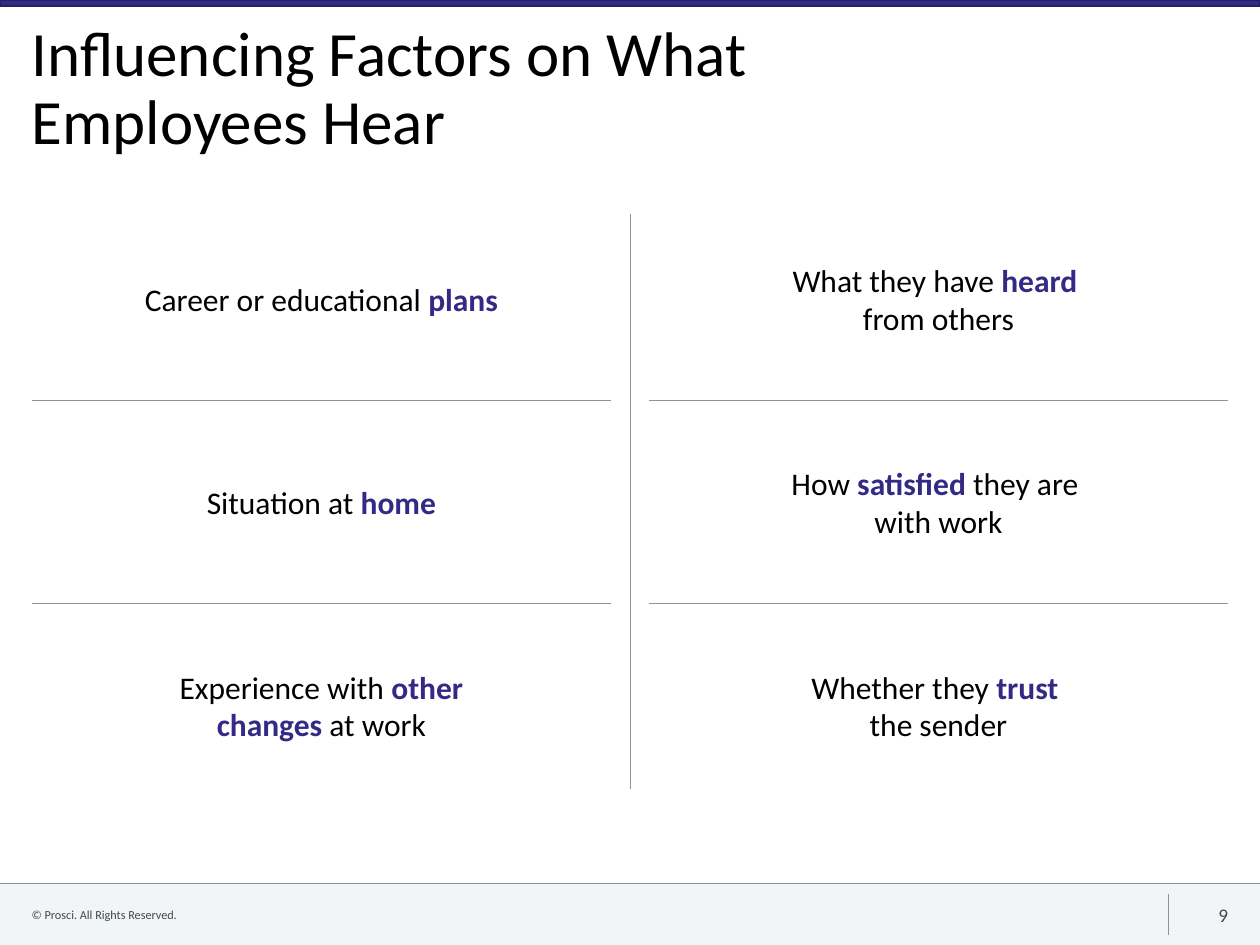
from dataclasses import dataclass

from lxml.etree import SubElement
from pptx import Presentation
from pptx.dml.color import RGBColor
from pptx.enum.shapes import MSO_CONNECTOR, MSO_SHAPE
from pptx.enum.text import MSO_ANCHOR as Anchor, PP_ALIGN as Align
from pptx.oxml.ns import qn
from pptx.util import Cm, Pt

COLORS = {
    "text": "000000",
    "accent": "342A86",
    "accent_edge": "261F63",
    "rule": "8C9696",
    "footer": "F2F5F5",
    "footer_text": "3F474F",
}
FONT = "Calibri"
WIDTH, HEIGHT = 25.4, 19.05
MARGIN = 0.64
FOOTER_TOP = 17.81
COLUMN_CENTERS = (6.48, 18.92)
FIRST_ROW_CENTER, ROW_PITCH = 6.02, 4.1
CELL_WIDTH, CELL_HEIGHT = 8.15, 1.8
RULE_WIDTH = 11.68


@dataclass(frozen=True)
class Segment:
    text: str
    color: str = "text"
    bold: bool = False


@dataclass(frozen=True)
class Box:
    left: float
    top: float
    width: float
    height: float


@dataclass(frozen=True)
class Style:
    size: float
    align: Align = Align.LEFT
    anchor: Anchor = Anchor.MIDDLE
    inset_x: float = 0
    line_spacing: float = 1.0


def key(text: str) -> Segment:
    """Highlighted words of a factor."""
    return Segment(text, "accent", True)


FACTORS = (
    (
        (Segment("Career or educational "), key("plans")),
        (Segment("What they have "), key("heard \n"), Segment("from others")),
    ),
    (
        (Segment("Situation at "), key("home")),
        (Segment("How "), key("satisfied"), Segment(" they are \nwith work")),
    ),
    (
        (Segment("Experience with "), key("other changes"), Segment(" at work")),
        (Segment("Whether they "), key("trust \n"), Segment("the sender")),
    ),
)


def rgb(name: str) -> RGBColor:
    return RGBColor.from_string(COLORS[name])


def add_band(slide, box: Box, fill: str, edge: str = "") -> None:
    shape = slide.shapes.add_shape(
        MSO_SHAPE.RECTANGLE, Cm(box.left), Cm(box.top), Cm(box.width), Cm(box.height)
    )
    shape.shadow.inherit = False
    shape.fill.solid()
    shape.fill.fore_color.rgb = rgb(fill)
    if edge:
        shape.line.color.rgb = rgb(edge)
        shape.line.width = Pt(1)
    else:
        shape.line.fill.background()


def add_rule(slide, x1: float, y1: float, x2: float, y2: float) -> None:
    connector = slide.shapes.add_connector(
        MSO_CONNECTOR.STRAIGHT, Cm(x1), Cm(y1), Cm(x2), Cm(y2)
    )
    connector.line.color.rgb = rgb("rule")
    connector.line.width = Pt(0.5)
    SubElement(connector._element.spPr, qn("a:effectLst"))


def add_text(slide, box: Box, segments: tuple[Segment, ...], style: Style) -> None:
    """Write the segments as one paragraph; a newline becomes a line break."""
    shape = slide.shapes.add_textbox(
        Cm(box.left), Cm(box.top), Cm(box.width), Cm(box.height)
    )
    frame = shape.text_frame
    frame.word_wrap = True
    frame.vertical_anchor = style.anchor
    frame.margin_left = frame.margin_right = Cm(style.inset_x)
    paragraph = frame.paragraphs[0]
    paragraph.alignment = style.align
    paragraph.line_spacing = style.line_spacing
    paragraph.font.size = Pt(style.size)
    for segment in segments:
        for index, line in enumerate(segment.text.split("\n")):
            if index:
                paragraph.add_line_break()
            if line:
                run = paragraph.add_run()
                run.text = line
                run.font.name = FONT
                run.font.size = Pt(style.size)
                run.font.bold = segment.bold
                run.font.color.rgb = rgb(segment.color)


def add_frame(slide) -> None:
    """Top band, footer and title."""
    add_band(slide, Box(0, FOOTER_TOP, WIDTH, HEIGHT - FOOTER_TOP), "footer")
    add_band(slide, Box(0, 0, WIDTH, 0.13), "accent", "accent_edge")
    add_rule(slide, 0, FOOTER_TOP, WIDTH, FOOTER_TOP)
    add_rule(slide, 23.56, 18.02, 23.56, 18.84)
    add_text(
        slide,
        Box(MARGIN, 18.17, 18.64, 0.55),
        (Segment("© Prosci. All Rights Reserved.", "footer_text"),),
        Style(7),
    )
    add_text(
        slide,
        Box(23.52, 18.18, 1.24, 0.54),
        (Segment("9", "footer_text"),),
        Style(11, Align.RIGHT),
    )
    add_text(
        slide,
        Box(MARGIN, 0.33, WIDTH - 2 * MARGIN, 2.29),
        (Segment("Influencing Factors on What \nEmployees Hear"),),
        Style(36, anchor=Anchor.TOP, line_spacing=0.9),
    )


def add_factor_grid(slide) -> None:
    style = Style(18, Align.CENTER, inset_x=0.25)
    for row, factors in enumerate(FACTORS):
        middle = FIRST_ROW_CENTER + row * ROW_PITCH
        for center, segments in zip(COLUMN_CENTERS, factors):
            box = Box(
                center - CELL_WIDTH / 2,
                middle - CELL_HEIGHT / 2,
                CELL_WIDTH,
                CELL_HEIGHT,
            )
            add_text(slide, box, segments, style)
        if row < len(FACTORS) - 1:
            y = middle + ROW_PITCH / 2
            for left in (MARGIN, WIDTH - MARGIN - RULE_WIDTH):
                add_rule(slide, left, y, left + RULE_WIDTH, y)
    add_rule(slide, WIDTH / 2, 4.32, WIDTH / 2, 15.9)


def main() -> None:
    presentation = Presentation()
    presentation.slide_width = Cm(WIDTH)
    presentation.slide_height = Cm(HEIGHT)
    slide = presentation.slides.add_slide(presentation.slide_layouts[6])
    add_frame(slide)
    add_factor_grid(slide)
    presentation.save("out.pptx")


if __name__ == "__main__":
    main()
